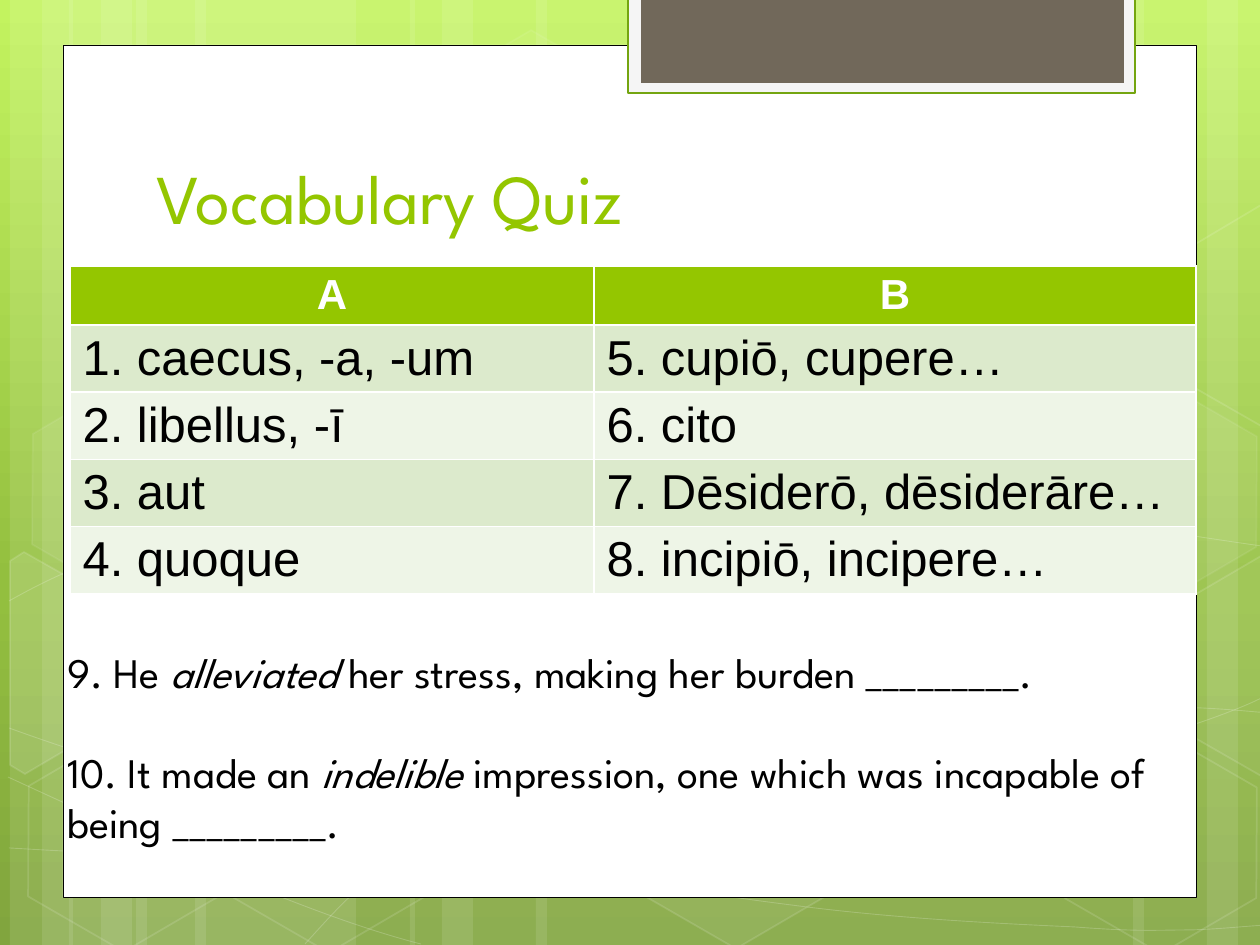
from copy import deepcopy
from lxml import etree
from pptx import Presentation
from pptx import util as u
from pptx.dml import color as col
from pptx.enum import shapes as sh, text as tx
from pptx.oxml import ns

WHITE, BLACK, GREEN = "FFFFFF", "000000", "94C600"
FONT = "League Spartan"
WIDE, HIGH = 1260, 945

WAVES = [  # start, then two handles and an end for every bend
    [(9, 848), (77, 852), (145, 856), (239, 854), (334, 853), (451, 851), (577, 838),
     (703, 825), (882, 801), (998, 777), (1113, 753), (1231, 716), (1269, 694)],
    [(9, 601), (45, 581), (82, 562), (152, 543), (224, 524), (326, 496), (437, 488),
     (549, 479), (685, 478), (824, 488), (963, 498), (1193, 537), (1269, 547)],
    [(8, 777), (160, 847), (311, 916), (421, 944)],
    [(9, 728), (48, 742), (88, 756), (161, 776), (234, 795), (344, 827), (450, 848),
     (554, 869), (687, 892), (791, 905), (896, 919), (1008, 924), (1075, 927),
     (1140, 932), (1158, 930), (1191, 930), (1223, 929), (1246, 926), (1269, 925)],
    [(305, 944), (328, 919), (350, 893), (381, 871), (411, 848), (454, 823), (489, 805),
     (524, 788), (546, 780), (592, 767), (638, 755), (722, 737), (766, 728),
     (811, 719), (818, 719), (857, 717), (896, 713), (958, 709), (1000, 708),
     (1045, 707), (1116, 708), (1116, 708), (1144, 708), (1173, 708), (1201, 708),
     (1223, 709), (1245, 711), (1256, 712), (1268, 713), (1264, 712), (1268, 713)],
]
HEXES = [  # left, top, fill opacity, line opacity
    (421, 45, 4, 8), (626, 742, 6, 12), (14, 745, 0, 12), (18, 393, 7, 8),
    (219, 746, 0, 12), (949, 571, 10, 12), (1051, 747, 0, 12), (1051, 396, 7, 8),
]
CUTS = [  # hexagons cut by the slide edge: fill opacity, corners
    (10, [(10, 561), (24, 552), (121, 607), (120, 718), (25, 774), (10, 765)]),
    (4, [(1167, 611), (1261, 556), (1271, 562), (1271, 772), (1263, 777), (1167, 722)]),
    (0, [(1167, 261), (1261, 205), (1273, 212), (1271, 422), (1263, 427), (1167, 372)]),
]
ROWS = [
    ("A", "B"),
    ("1. caecus, -a, -um", "5. cupiō, cupere…"),
    ("2. libellus, -ī", "6. cito"),
    ("3. aut", "7. Dēsiderō, dēsiderāre…"),
    ("4. quoque", "8. incipiō, incipere…"),
]
ASKS = [
    ("9. He ", "alleviated", " her stress, making her burden _________."),
    ("10. It made an ", "indelible",
     " impression, one which was incapable of being _________."),
]


def px(*nums):
    return [u.Emu(round(n * 914400 / 126)) for n in nums]


def rgb(code):
    return col.RGBColor.from_string(code)


def fade(node, pct):
    tint = node.find(".//" + ns.qn("a:srgbClr"))
    etree.SubElement(tint, ns.qn("a:alpha")).set("val", str(pct * 1000))


def paint(shape, fill=None, line=None, width=1, solid=100, clear=100):
    """Set fill and line; solid and clear are their opacities in percent."""
    shape.shadow.inherit = False
    props = shape.element.spPr
    if fill and solid:
        shape.fill.solid()
        shape.fill.fore_color.rgb = rgb(fill)
        if solid < 100:
            fade(props.find(ns.qn("a:solidFill")), solid)
    else:
        shape.fill.background()
    if line:
        shape.line.color.rgb = rgb(line)
        shape.line.width = u.Pt(width)
        if clear < 100:
            fade(props.find(ns.qn("a:ln")), clear)
    else:
        shape.line.fill.background()


def style(run, size, face, tint, bold=False, slant=False):
    font = run.font
    font.size, font.name, font.bold, font.italic = u.Pt(size), face, bold, slant
    font.color.rgb = rgb(tint)


def rect(slide, box, **look):
    shape = slide.shapes.add_shape(sh.MSO_SHAPE.RECTANGLE, *px(*box))
    paint(shape, **look)


def trace(slide, dots, close, **look):
    pts = [px(*dot) for dot in dots]
    pen = slide.shapes.build_freeform(*pts[0])
    pen.add_line_segments(pts[1:], close=close)
    shape = pen.convert_to_shape()
    paint(shape, **look)
    return shape


def bend(shape):
    """Turn every three straight steps of an outline into one cubic curve."""
    steps = list(shape.element.iter(ns.qn("a:lnTo")))
    for i in range(0, len(steps), 3):
        curve = etree.Element(ns.qn("a:cubicBezTo"))
        steps[i].addprevious(curve)
        for step in steps[i:i + 3]:
            curve.append(step[0])
            step.getparent().remove(step)


def sky(slide):
    fill = slide.background.fill
    fill.gradient()
    fill.gradient_angle = 270
    stops = slide.element.find(".//" + ns.qn("a:gsLst"))
    stops.append(deepcopy(stops[-1]))
    for stop, (pos, tint) in zip(fill.gradient_stops,
                                 [(0, "C3F35F"), (0.62, "93BF3F"), (1, "81A53E")]):
        stop.position, stop.color.rgb = pos, rgb(tint)


def bands(slide, left, wide, flip=False):
    """Three pale stripes; flip puts the two narrow ones on the right."""
    for off, w in ((0, wide), (-126, 63), (-94, 105)):
        x = left + wide - off - w if flip else left + off
        rect(slide, (x, 0, w, HIGH), fill=WHITE, solid=10)


def decor(slide):
    for left, wide, flip in ((136, 220, False), (195, 220, False),
                             (924, 220, True), (536, 388, False)):
        bands(slide, left, wide, flip)
    for wave in WAVES:
        bend(trace(slide, wave, False, line=WHITE, width=0.5, clear=20))
    for x, y, solid, clear in HEXES:
        hexa = slide.shapes.add_shape(sh.MSO_SHAPE.HEXAGON, *px(x, y, 220, 192))
        hexa.adjustments[0] = 0.285
        hexa.rotation = 30
        paint(hexa, WHITE, WHITE, 1, solid, clear)
    for solid, dots in CUTS:
        trace(slide, dots, True, fill=WHITE, line=WHITE, solid=solid, clear=12)


def panel(slide, x, y, w, h):
    rect(slide, (x, y, w, h), fill=WHITE, line=BLACK, width=0.5)
    rect(slide, (x + 565, -3, 507, 96), fill="F5F5F5", line="74A510", width=1.25)
    rect(slide, (x + 578, -3, 483, 86), fill="71685A")


def head(slide, *box):
    title = slide.shapes.title
    title.element.getparent().append(title.element)  # bring to front
    title.left, title.top, title.width, title.height = px(*box)
    frame = title.text_frame
    frame.text = "Vocabulary Quiz"
    frame.auto_size = tx.MSO_AUTO_SIZE.NONE
    frame.vertical_anchor = tx.MSO_ANCHOR.BOTTOM
    frame.paragraphs[0].alignment = tx.PP_ALIGN.LEFT
    style(frame.paragraphs[0].runs[0], 40, FONT, GREEN)


def words(slide, x, y, w, h):
    """Word table; its default style draws the white rules."""
    table = slide.shapes.add_table(len(ROWS), 2, *px(x, y, w, h)).table
    table.columns[0].width, table.columns[1].width = px(524, w - 524)
    for r, pair in enumerate(ROWS):
        top = r == 0
        table.rows[r].height = px(59 if top else (h - 59) / 4)[0]
        for c, word in enumerate(pair):
            cell = table.cell(r, c)
            cell.text = word
            cell.margin_top, cell.margin_bottom = px(6, 4)
            cell.fill.solid()
            cell.fill.fore_color.rgb = rgb(GREEN if top else ("EEF5E7", "DCEACC")[r % 2])
            para = cell.text_frame.paragraphs[0]
            para.alignment = tx.PP_ALIGN.CENTER if top else tx.PP_ALIGN.LEFT
            style(para.runs[0], 24 if top else 28, "Arial", WHITE if top else BLACK, top)


def asks(slide, *box):
    frame = slide.shapes.add_textbox(*px(*box)).text_frame
    frame.word_wrap = True
    frame.auto_size = tx.MSO_AUTO_SIZE.SHAPE_TO_FIT_TEXT
    for i, parts in enumerate(ASKS):
        para = frame.add_paragraph() if i else frame.paragraphs[0]
        para.space_before = u.Pt(28.5 * i)
        for k, part in enumerate(parts):
            run = para.add_run()
            run.text = part
            style(run, 24, FONT, BLACK, slant=k == 1)


def main():
    deck = Presentation()
    deck.slide_width, deck.slide_height = px(WIDE, HIGH)
    slide = deck.slides.add_slide(deck.slide_layouts[5])
    sky(slide)
    decor(slide)
    panel(slide, 63, 45, 1134, 853)
    head(slide, 144, 88, 968, 157)
    words(slide, 70, 266, 1126, 328)
    asks(slide, 55, 640, 1171, 217)
    deck.save("out.pptx")


if __name__ == "__main__":
    main()
